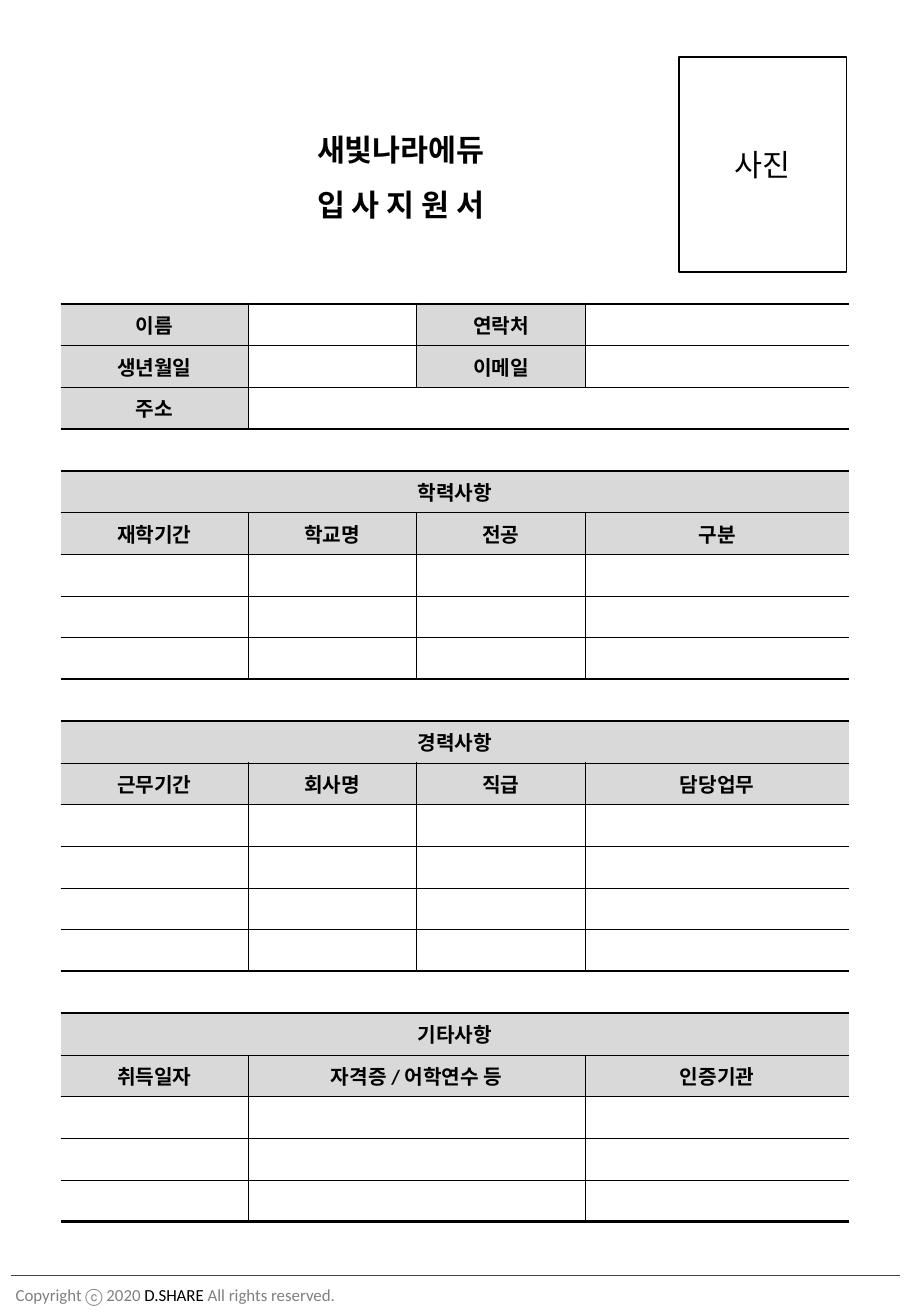
from lxml import etree
from pptx import Presentation
from pptx import util as u
from pptx.dml.color import RGBColor
from pptx.enum import shapes, text
from pptx.oxml.ns import qn

PX = 9144  # 100 px to the inch
FONT = "Calibri"
BLACK, GREY, LABEL_FILL, RULE = "000000", "808080", "D9D9D9", "3D4643"
THIN, HEAVY = 0.25, 1.5


def color(value):
    return RGBColor.from_string(value)


def add_run(paragraph, words, size, value=BLACK, bold=False):
    run = paragraph.add_run()
    run.text = words
    run.font.name = FONT
    run.font.size = u.Pt(size)
    run.font.bold = bold
    run.font.color.rgb = color(value)


presentation = Presentation()
presentation.slide_width = 750 * PX
presentation.slide_height = 1083 * PX
slide = presentation.slides.add_slide(presentation.slide_layouts[6])

# Footer
footer = slide.shapes.add_textbox(3 * PX, 1052 * PX, 441 * PX, 27 * PX)
footer.text_frame.word_wrap = True
for words, value in [("Copyright ⓒ 2020 ", GREY), ("D.SHARE", BLACK),
                     (" All rights reserved.", GREY)]:
    add_run(footer.text_frame.paragraphs[0], words, 10, value)

footer_line = slide.shapes.add_connector(
    shapes.MSO_CONNECTOR.STRAIGHT, 9 * PX, 1050 * PX, 741 * PX, 1050 * PX)
footer_line.line.color.rgb = color(RULE)
footer_line.line.width = u.Pt(0.5)
etree.SubElement(footer_line._element.spPr, qn("a:effectLst"))

# Title
title = slide.shapes.add_textbox(238 * PX, 88 * PX, 184 * PX, 96 * PX)
title.text_frame.word_wrap = False
for index, words in enumerate(["새빛나라에듀", "입 사 지 원 서"]):
    frame = title.text_frame
    paragraph = frame.add_paragraph() if index else frame.paragraphs[0]
    paragraph.alignment = text.PP_ALIGN.CENTER
    paragraph.line_spacing = 1.5
    add_run(paragraph, words, 18, bold=True)

# Photo frame
photo = slide.shapes.add_shape(
    shapes.MSO_SHAPE.RECTANGLE, 559 * PX, 47 * PX, 138 * PX, 177 * PX)
photo.shadow.inherit = False
photo.fill.background()
photo.line.color.rgb = color(BLACK)
photo.line.width = u.Pt(1)
photo.text_frame.vertical_anchor = text.MSO_ANCHOR.MIDDLE
paragraph = photo.text_frame.paragraphs[0]
paragraph.alignment = text.PP_ALIGN.CENTER
add_run(paragraph, "사진", 18)

# Form rows: None continues the cell on its left
GAP = ["", None, None, None]
EMPTY = [""] * 4
EMPTY_WIDE = ["", "", None, ""]
form_rows = [
    ["이름", "", "연락처", ""],
    ["생년월일", "", "이메일", ""],
    ["주소", "", None, None],
    GAP,
    ["학력사항", None, None, None],
    ["재학기간", "학교명", "전공", "구분"],
    *[EMPTY] * 3,
    GAP,
    ["경력사항", None, None, None],
    ["근무기간", "회사명", "직급", "담당업무"],
    *[EMPTY] * 4,
    GAP,
    ["기타사항", None, None, None],
    ["취득일자", "자격증 / 어학연수 등", None, "인증기관"],
    *[EMPTY_WIDE] * 3,
]
column_widths = [154, 139, 139, 217]
row_count, column_count = len(form_rows), len(column_widths)

form = slide.shapes.add_table(
    row_count, column_count, 50 * PX, 250 * PX, 647 * PX, 756 * PX).table
form.first_row = False
form.horz_banding = False
for column, width in zip(form.columns, column_widths):
    column.width = width * PX

# Cells
for row, labels in enumerate(form_rows):
    # A section starts and ends with a heavy rule
    starts = row == 0 or GAP in (labels, form_rows[row - 1])
    ends = row == row_count - 1 or GAP in (labels, form_rows[row + 1])
    for column, label in enumerate(labels):
        cell = form.cell(row, column)
        end = column + 1
        while end < column_count and labels[end] is None:
            end += 1
        if label is not None and end > column + 1:
            cell.merge(form.cell(row, end - 1))

        cell.margin_top = cell.margin_bottom = 0
        cell.vertical_anchor = text.MSO_ANCHOR.MIDDLE
        if label:
            cell.fill.solid()
            cell.fill.fore_color.rgb = color(LABEL_FILL)
            paragraph = cell.text_frame.paragraphs[0]
            paragraph.alignment = text.PP_ALIGN.CENTER
            add_run(paragraph, label, 12, bold=True)
        else:
            cell.fill.background()

        visible = label is not None
        borders = {
            "L": THIN if visible and column else 0,
            "R": THIN if visible and end < column_count else 0,
            "T": HEAVY if starts else THIN,
            "B": HEAVY if ends else THIN,
        }
        properties = cell._tc.get_or_add_tcPr()
        for position, (side, width) in enumerate(borders.items()):
            border = etree.Element(qn(f"a:ln{side}"), w=str(int(u.Pt(width))))
            if width:
                fill = etree.SubElement(border, qn("a:solidFill"))
                etree.SubElement(fill, qn("a:srgbClr"), val=BLACK)
            else:
                etree.SubElement(border, qn("a:noFill"))
            properties.insert(position, border)

presentation.save("out.pptx")
